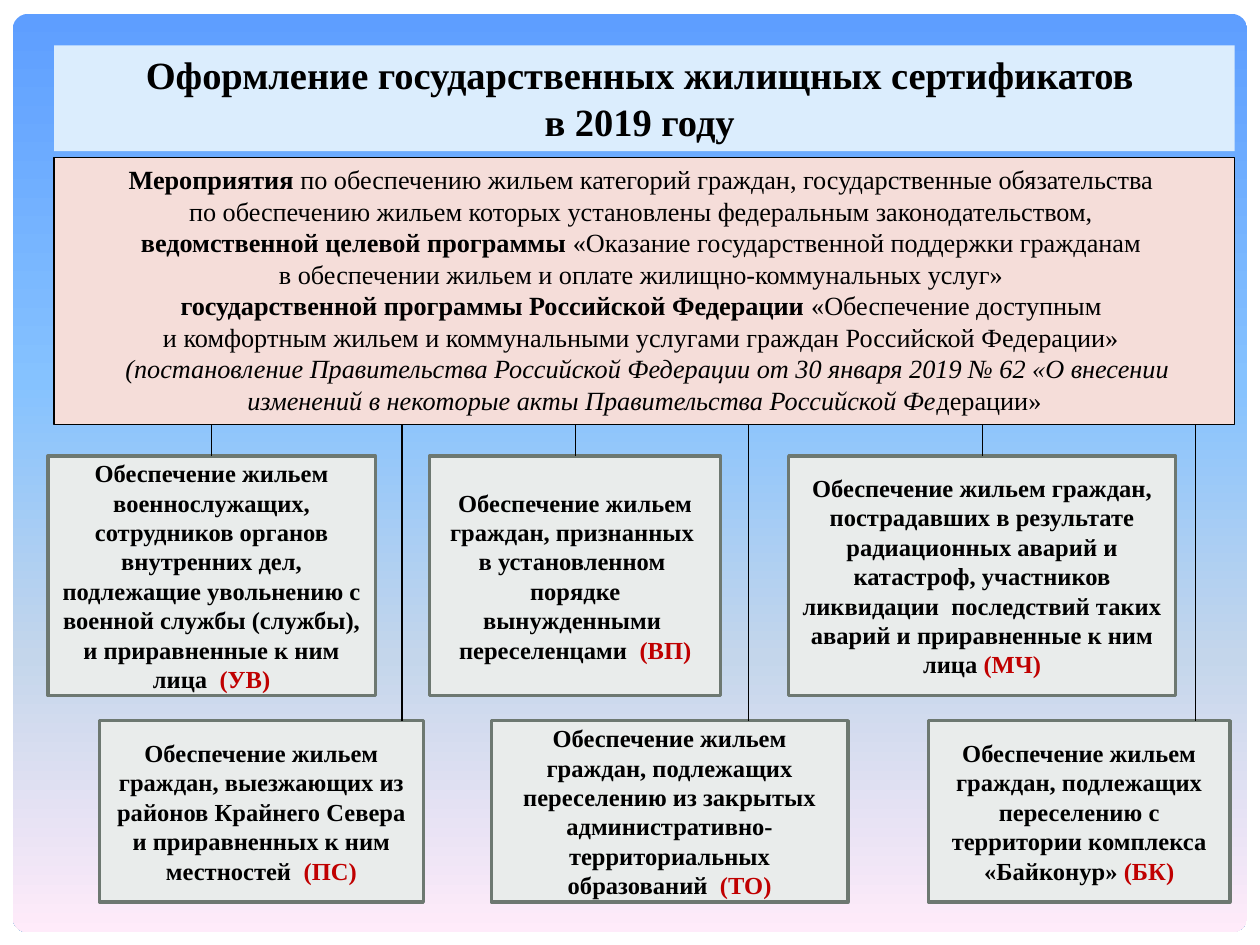
from dataclasses import dataclass

from lxml.etree import SubElement
from pptx import Presentation
from pptx.dml.color import RGBColor
from pptx.enum.shapes import MSO_CONNECTOR, MSO_SHAPE
from pptx.enum.text import MSO_ANCHOR, MSO_AUTO_SIZE, PP_ALIGN
from pptx.oxml.ns import qn
from pptx.util import Inches, Pt


@dataclass(frozen=True)
class Theme:
    font: str = "Times New Roman"
    title_size: int = 22
    program_size: int = 15
    category_size: int = 14
    text: str = "000000"
    code: str = "C00000"
    title_fill: str = "DBEDFD"
    program_fill: str = "F5DDD9"
    category_fill: str = "E9ECEB"
    category_line: str = "6D7871"
    backdrop: tuple = ((0, "5E9EFF"), (40, "85C2FF"), (70, "C4D6EB"), (100, "FFEBFA"))


THEME = Theme()

TITLE = ["Оформление государственных жилищных сертификатов ", "в 2019 году "]

# Each paragraph is a list of (text, style) spans
PROGRAM = [
    [("Мероприятия ", "bold"),
     ("по обеспечению жильем категорий граждан, государственные обязательства \n"
      "по обеспечению жильем которых установлены федеральным законодательством, ", "")],
    [("ведомственной целевой программы ", "bold"),
     ("«Оказание государственной поддержки гражданам \n"
      "в обеспечении жильем и оплате жилищно-коммунальных услуг» ", "")],
    [("государственной программы Российской Федерации ", "bold"),
     ("«Обеспечение доступным \n"
      "и комфортным жильем и коммунальными услугами граждан Российской Федерации» ", "")],
    [(" ", ""),
     ("(постановление Правительства Российской Федерации от 30 января 2019 № 62 "
      "«О внесении изменений в некоторые акты Правительства Российской Фе", "italic"),
     ("дерации»", "")],
]

# Rows of categories: (top, height), then (left, width, connector x, text, code)
ROWS = [
    ((3.62, 1.9), [
        (0.38, 2.6, 1.68,
         "Обеспечение жильем военнослужащих, сотрудников органов внутренних дел, "
         "подлежащие увольнению с военной службы (службы), и приравненные к ним лица  ",
         "(УВ)"),
        (3.41, 2.31, 4.57,
         "Обеспечение жильем граждан, признанных \n"
         "в установленном  порядке вынужденными  переселенцами  ", "(ВП)"),
        (6.26, 3.07, 7.8,
         "Обеспечение жильем граждан, пострадавших в результате радиационных аварий "
         "и катастроф, участников ликвидации  последствий таких аварий "
         "и приравненные к ним лица ", "(МЧ)"),
    ]),
    ((5.72, 1.44), [
        (0.79, 2.57, 3.19,
         "Обеспечение жильем граждан, выезжающих из районов Крайнего Севера "
         "и приравненных к ним местностей  ", "(ПС)"),
        (3.9, 2.83, 5.94,
         "Обеспечение жильем граждан, подлежащих переселению из закрытых "
         "административно-территориальных образований  ", "(ТО)"),
        (7.37, 2.39, 9.49,
         "Обеспечение жильем граждан, подлежащих переселению с территории комплекса "
         "«Байконур» ", "(БК)"),
    ]),
]


def rgb(value):
    return RGBColor.from_string(value)


def add_panel(page, box, fill=None, line=None, width=0.75, kind=MSO_SHAPE.RECTANGLE):
    panel = page.shapes.add_shape(kind, *(Inches(value) for value in box))
    panel.shadow.inherit = False
    if fill:
        panel.fill.solid()
        panel.fill.fore_color.rgb = rgb(fill)
    if line:
        panel.line.color.rgb = rgb(line)
        panel.line.width = Pt(width)
    else:
        panel.line.fill.background()
    panel.text_frame.word_wrap = True
    return panel


def style_para(para, size, bold):
    para.alignment = PP_ALIGN.CENTER
    para.font.name = THEME.font
    para.font.size = Pt(size)
    para.font.bold = bold
    para.font.color.rgb = rgb(THEME.text)


def add_span(para, text):
    """Add text, with line breaks at newlines; return its spans."""
    spans = []
    for number, part in enumerate(text.split("\n")):
        if number:
            para.add_line_break()
        span = para.add_run()
        span.text = part
        spans.append(span)
    return spans


def paragraphs(frame, count):
    return [frame.paragraphs[0]] + [frame.add_paragraph() for _ in range(count - 1)]


def add_backdrop(page, box):
    panel = add_panel(page, box, kind=MSO_SHAPE.ROUNDED_RECTANGLE)
    panel.adjustments[0] = 0.017
    panel.fill.gradient()
    gradient = panel.fill._xPr.find(qn("a:gradFill"))
    for child in list(gradient):
        gradient.remove(child)
    stops = SubElement(gradient, qn("a:gsLst"))
    for position, color in THEME.backdrop:
        stop = SubElement(stops, qn("a:gs"), pos=str(position * 1000))
        SubElement(stop, qn("a:srgbClr"), val=color)
    SubElement(gradient, qn("a:lin"), ang="5400000", scaled="0")


def add_title(page, box):
    frame = add_panel(page, box, THEME.title_fill).text_frame
    frame.vertical_anchor = MSO_ANCHOR.TOP
    frame.auto_size = MSO_AUTO_SIZE.SHAPE_TO_FIT_TEXT
    for para, text in zip(paragraphs(frame, len(TITLE)), TITLE):
        style_para(para, THEME.title_size, True)
        add_span(para, text)


def add_program(page, box):
    frame = add_panel(page, box, THEME.program_fill, THEME.text).text_frame
    frame.vertical_anchor = MSO_ANCHOR.TOP
    frame.auto_size = MSO_AUTO_SIZE.SHAPE_TO_FIT_TEXT
    for para, content in zip(paragraphs(frame, len(PROGRAM)), PROGRAM):
        style_para(para, THEME.program_size, False)
        for text, style in content:
            for span in add_span(para, text):
                if style:
                    setattr(span.font, style, True)


def add_category(page, box, text, code):
    frame = add_panel(page, box, THEME.category_fill, THEME.category_line, 2).text_frame
    frame.vertical_anchor = MSO_ANCHOR.MIDDLE
    para = frame.paragraphs[0]
    style_para(para, THEME.category_size, True)
    add_span(para, text)
    add_span(para, code)[0].font.color.rgb = rgb(THEME.code)


def add_link(page, x, top, bottom):
    link = page.shapes.add_connector(
        MSO_CONNECTOR.STRAIGHT, Inches(x), Inches(top), Inches(x), Inches(bottom))
    link.line.color.rgb = rgb(THEME.text)
    link.line.width = Pt(0.75)
    SubElement(link._element.spPr, qn("a:effectLst"))


def main():
    deck = Presentation()
    deck.slide_width, deck.slide_height = Inches(10), Inches(7.5)
    page = deck.slides.add_slide(deck.slide_layouts[6])

    add_backdrop(page, (0.1, 0.11, 9.8, 7.29))
    add_title(page, (0.43, 0.36, 9.37, 0.84))
    program_top, program_height = 1.25, 2.12
    add_program(page, (0.43, program_top, 9.37, program_height))

    # Categories, each hanging from the program panel
    for (top, height), categories in ROWS:
        for left, width, link_x, text, code in categories:
            add_category(page, (left, top, width, height), text, code)
            add_link(page, link_x, program_top + program_height, top)

    deck.save("out.pptx")


if __name__ == "__main__":
    main()
